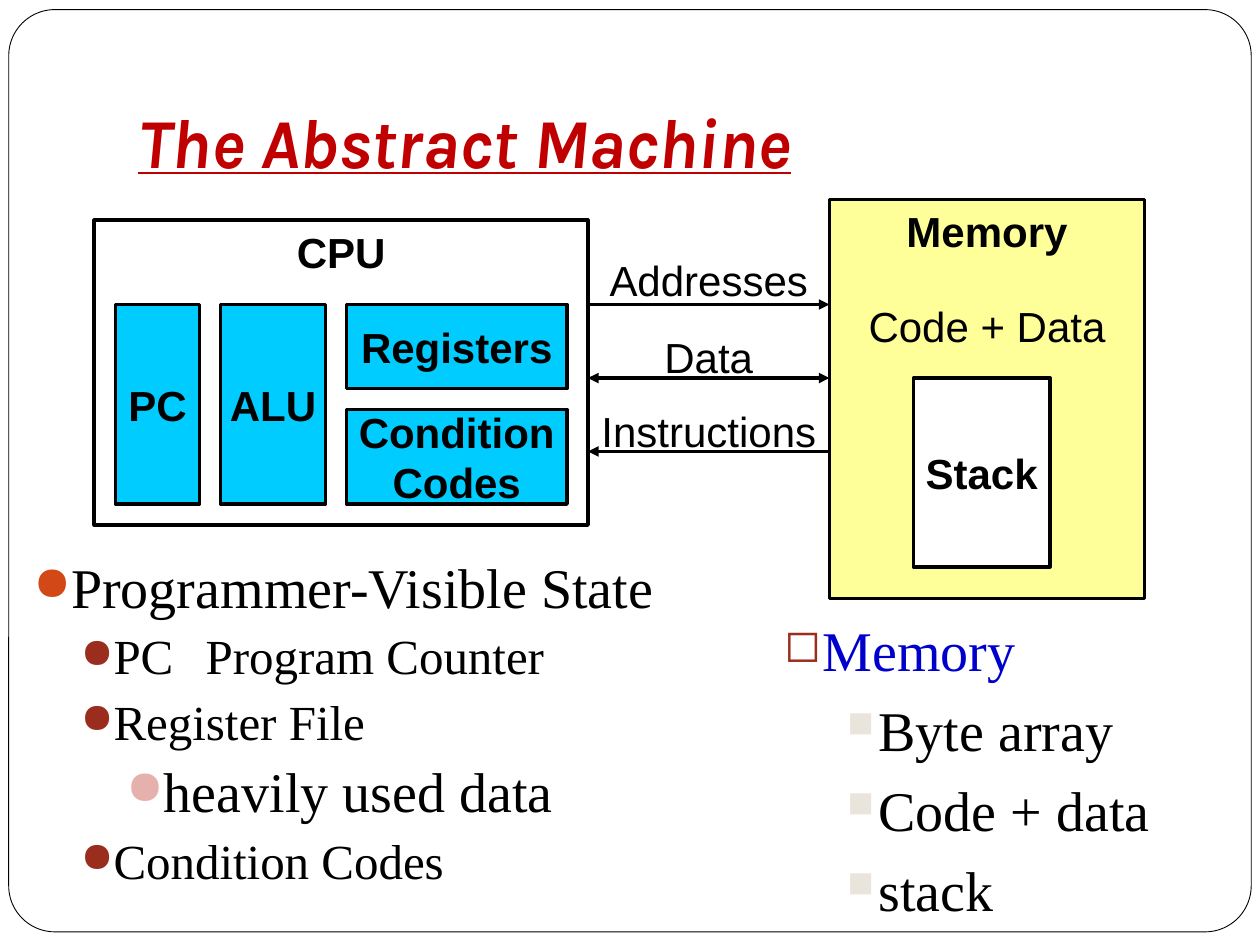
import pptx
import pptx.util
import pptx.dml.color
import pptx.enum.shapes
import pptx.enum.text
import lxml.etree

Pt = pptx.util.Pt
RGBColor = pptx.dml.color.RGBColor
MSO_SHAPE = pptx.enum.shapes.MSO_SHAPE
PP_ALIGN = pptx.enum.text.PP_ALIGN
MSO_ANCHOR = pptx.enum.text.MSO_ANCHOR

BLACK = RGBColor(0x00, 0x00, 0x00)
WHITE = RGBColor(0xFF, 0xFF, 0xFF)
RED = RGBColor(0xC0, 0x00, 0x00)
CYAN = RGBColor(0x00, 0xCC, 0xFF)
YELLOW = RGBColor(0xFF, 0xFF, 0x99)
BLUE = RGBColor(0x00, 0x00, 0xCC)
ORANGE = RGBColor(0xD3, 0x48, 0x17)
BRICK = RGBColor(0x9B, 0x2D, 0x1F)
PINK = RGBColor(0xE6, 0xB1, 0xAC)
SAND = RGBColor(0xE9, 0xE5, 0xDC)

TITLE = "The Abstract Machine"
TOP, MIDDLE = MSO_ANCHOR.TOP, MSO_ANCHOR.MIDDLE

BLOCKS = [
    (["CPU"], (54, 126, 282, 174), None, 2.25, TOP),
    (["PC"], (66, 174, 48, 114), CYAN, 2, MIDDLE),
    (["ALU"], (126, 174, 60, 114), CYAN, 2, MIDDLE),
    (["Registers"], (198, 174, 126, 48), CYAN, 2, MIDDLE),
    (["Condition", "Codes"], (198, 234, 126, 54), CYAN, 2, MIDDLE),
    (["Memory"], (474, 114, 180, 228), YELLOW, 2, TOP),
    (["Stack"], (522, 216, 78, 108), WHITE, 2, MIDDLE),
]
CPU_RIGHT, MEMORY_LEFT = 336, 474
BUS_TOP, BUS_GAP = 174, 42
BUSES = [
    ("Addresses", 142, ["tailEnd"]),
    ("Data", 186, ["headEnd", "tailEnd"]),
    ("Instructions", 228, ["headEnd"]),
]

STATE_LEVELS = [
    dict(size=32, margin=14, hang=14, before=5.8, bullet="●", tint=ORANGE, scale=85),
    dict(size=28, margin=44, hang=17, before=3.7, bullet="●", tint=BRICK, scale=85),
    dict(size=32, margin=66, hang=13, before=3.7, bullet="●", tint=PINK, scale=85),
]
STATE = [
    (0, "Programmer-Visible State", BLACK),
    (1, "PC\tProgram Counter", BLACK),
    (1, "Register File", BLACK),
    (2, "heavily used data", BLACK),
    (1, "Condition Codes", BLACK),
]
PROGRAM_TAB = 98.5
MEMORY_LEVELS = [
    dict(size=32, margin=58, hang=22, before=7.4, bullet="◻", tint=BRICK, scale=80),
    dict(size=32, margin=90, hang=18, before=7.4, bullet="■", tint=SAND, scale=65),
]
MEMORY = [
    (0, "Memory", BLUE),
    (1, "Byte array", BLACK),
    (1, "Code + data", BLACK),
    (1, "stack", BLACK),
]


def add_child(parent, tag, **attributes):
    qualified = pptx.oxml.ns.qn("a:" + tag)
    return lxml.etree.SubElement(parent, qualified, attributes)


def style(paragraph, face, size, color, bold=False):
    font = paragraph.font
    font.name, font.size, font.bold = face, Pt(size), bold
    font.color.rgb = color


def add_box(slide, kind, place, fill, weight):
    box = slide.shapes.add_shape(kind, *map(Pt, place))
    box.shadow.inherit = False
    if fill is None:
        box.fill.background()
    else:
        box.fill.solid()
        box.fill.fore_color.rgb = fill
    box.line.color.rgb = BLACK
    box.line.width = Pt(weight)
    return box


def add_block(slide, lines, place, fill, weight, anchor):
    frame = add_box(slide, MSO_SHAPE.RECTANGLE, place, fill, weight).text_frame
    frame.word_wrap = False
    frame.vertical_anchor = anchor
    frame.text = "\n".join(lines)
    for paragraph in frame.paragraphs:
        paragraph.alignment = PP_ALIGN.CENTER
        style(paragraph, "Arial", 24, BLACK, True)


def add_text(slide, place):
    frame = slide.shapes.add_textbox(*map(Pt, place)).text_frame
    frame.word_wrap = True
    return frame


def add_label(slide, text, place):
    paragraph = add_text(slide, place).paragraphs[0]
    paragraph.text = text
    paragraph.alignment = PP_ALIGN.CENTER
    style(paragraph, "Arial", 24, BLACK)


def add_bus(slide, y, arrowheads):
    bus = slide.shapes.add_connector(
        pptx.enum.shapes.MSO_CONNECTOR.STRAIGHT,
        Pt(CPU_RIGHT), Pt(y), Pt(MEMORY_LEFT), Pt(y))
    bus.line.color.rgb = BLACK
    bus.line.width = Pt(2)
    for end in arrowheads:
        add_child(bus.line._get_or_add_ln(), end, type="triangle")
    add_child(bus._element.spPr, "effectLst")


def add_outline(slide, place, levels, items):
    frame = add_text(slide, place)
    frame.text = "\n".join(text for _, text, _ in items)
    for paragraph, (depth, text, color) in zip(frame.paragraphs, items):
        level = levels[depth]
        paragraph.level = depth
        paragraph.space_before = Pt(level["before"])
        style(paragraph, "Times New Roman", level["size"], color)
        properties = paragraph._p.get_or_add_pPr()
        properties.set("marL", str(Pt(level["margin"])))
        properties.set("indent", str(-Pt(level["hang"])))
        defaults = properties.find(pptx.oxml.ns.qn("a:defRPr"))
        properties.remove(defaults)
        tint = add_child(properties, "buClr")
        add_child(tint, "srgbClr", val=str(level["tint"]))
        add_child(properties, "buSzPct", val=str(level["scale"] * 1000))
        add_child(properties, "buChar", char=level["bullet"])
        if "\t" in text:
            tabs = add_child(properties, "tabLst")
            add_child(tabs, "tab", pos=str(Pt(PROGRAM_TAB)), algn="l")
        properties.append(defaults)


def main():
    deck = pptx.Presentation()
    deck.slide_width, deck.slide_height = Pt(720), Pt(540)
    slide = deck.slides.add_slide(deck.slide_layouts[6])

    border = add_box(slide, MSO_SHAPE.ROUNDED_RECTANGLE, (5, 5.5, 710, 527), WHITE, 0.5)
    border.adjustments[0] = 0.05

    title = add_text(slide, (72, 21.6, 612, 90))
    title.vertical_anchor = MSO_ANCHOR.BOTTOM
    title.margin_bottom = Pt(7.2)
    heading = title.paragraphs[0]
    heading.text = TITLE
    style(heading, "Karla", 40, RED, True)
    heading.font.italic = heading.font.underline = True

    for block in BLOCKS:
        add_block(slide, *block)
    add_label(slide, "Code + Data", (474, 168, 180, 36))
    for row, (name, label_top, arrowheads) in enumerate(BUSES):
        add_bus(slide, BUS_TOP + row * BUS_GAP, arrowheads)
        add_label(slide, name, (CPU_RIGHT - 6, label_top, 150, 36))

    add_outline(slide, (12, 312, 427, 212), STATE_LEVELS, STATE)
    add_outline(slide, (405, 348, 297, 180), MEMORY_LEVELS, MEMORY)
    deck.save("out.pptx")


if __name__ == "__main__":
    main()
